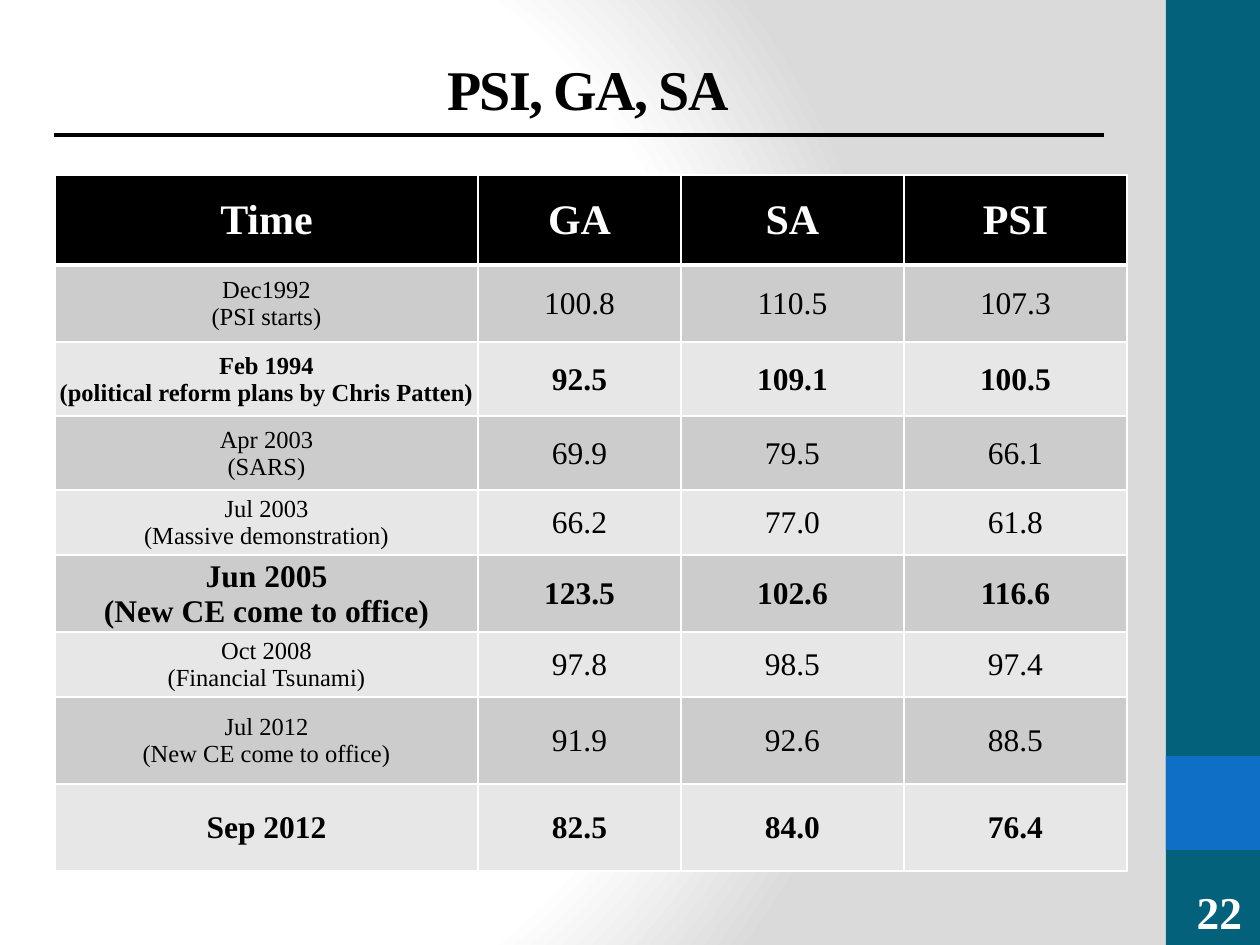
from lxml.etree import SubElement
from pptx import Presentation
from pptx.dml.color import RGBColor
from pptx.enum.shapes import MSO_CONNECTOR, MSO_SHAPE
from pptx.enum.text import MSO_ANCHOR, MSO_AUTO_SIZE, PP_ALIGN
from pptx.oxml import parse_xml
from pptx.oxml.ns import nsdecls, qn
from pptx.util import Pt

COLORS = {
    "black": "000000", "white": "FFFFFF", "shade": "DADADA",
    "teal": "04617B", "blue": "0F6FC6",
    "band_dark": "CCCCCC", "band_light": "E7E7E7",
}
FONT = "Times New Roman"


def px(*lengths):
    """Turn pixels (126 to the inch) into a list of EMU."""
    return [round(n * 914400 / 126) for n in lengths]


def style(p, size, color, bold):
    p.alignment = PP_ALIGN.CENTER
    p.font.name = FONT
    p.font.size = Pt(size)
    p.font.bold = bold
    p.font.color.rgb = RGBColor.from_string(COLORS[color])


prs = Presentation()
prs.slide_width, prs.slide_height = px(1260, 945)
s = prs.slides.add_slide(prs.slide_layouts[5])

# Background: radial gradient centred a fifth of the way across
s.background.fill.solid()
bg = s.element.find(".//" + qn("p:bgPr"))
stops = "".join(
    f'<a:gs pos="{pos}"><a:srgbClr val="{COLORS[name]}"/></a:gs>'
    for pos, name in ((0, "white"), (75000, "white"), (100000, "shade")))
bg.replace(bg[0], parse_xml(
    f'<a:gradFill {nsdecls("a")} rotWithShape="1"><a:gsLst>{stops}</a:gsLst>'
    '<a:path path="circle">'
    '<a:fillToRect l="20000" t="50000" r="100000" b="50000"/>'
    '</a:path></a:gradFill>'))

# Side band with its accent square
for top, height, color in ((0, 945, "teal"), (756, 94, "blue")):
    sp = s.shapes.add_shape(MSO_SHAPE.RECTANGLE, *px(1166, top, 94, height))
    sp.shadow.inherit = False
    sp.fill.solid()
    sp.fill.fore_color.rgb = RGBColor.from_string(COLORS[color])
    sp.line.fill.background()

# Slide number
tf = s.shapes.add_textbox(*px(1179, 878, 81, 67)).text_frame
tf.word_wrap = True
tf.vertical_anchor = MSO_ANCHOR.BOTTOM
p = tf.paragraphs[0]
p.text = "22"
style(p, 26, "white", True)

# Title and the rule below it
title = s.shapes.title
title.left, title.top, title.width, title.height = px(63, 38, 1050, 70)
tf = title.text_frame
tf.auto_size = MSO_AUTO_SIZE.NONE
tf.vertical_anchor = MSO_ANCHOR.TOP
tf.margin_top, tf.margin_bottom = px(16, 0)
p = tf.paragraphs[0]
p.text = "PSI, GA, SA"
style(p, 32, "black", True)
p.font._rPr.set("spc", "-100")

rule = s.shapes.add_connector(MSO_CONNECTOR.STRAIGHT, *px(54, 135, 1104, 135))
rule.line.width = Pt(2.25)
rule.line.color.rgb = RGBColor.from_string(COLORS["black"])
SubElement(rule._element.spPr, qn("a:effectLst"))

# Table: row height, bold, size of the time cell, then the four texts
rows = [
    (90, True, 24, "Time", "GA", "SA", "PSI"),
    (77, False, 14, "Dec1992\n(PSI starts)", "100.8", "110.5", "107.3"),
    (74, True, 14, "Feb 1994\n(political reform plans by Chris Patten)",
     "92.5", "109.1", "100.5"),
    (74, False, 14, "Apr 2003\n(SARS)", "69.9", "79.5", "66.1"),
    (65, False, 14, "Jul 2003\n(Massive demonstration)", "66.2", "77.0", "61.8"),
    (77, True, 18, "Jun 2005\n(New CE come to office)",
     "123.5", "102.6", "116.6"),
    (65, False, 14, "Oct 2008\n(Financial Tsunami)", "97.8", "98.5", "97.4"),
    (87, False, 14, "Jul 2012\n(New CE come to office)", "91.9", "92.6", "88.5"),
    (87, True, 18, "Sep 2012", "82.5", "84.0", "76.4"),
]
col_widths = (423, 203, 223, 223)
table = s.shapes.add_table(
    len(rows), len(col_widths),
    *px(55, 175, sum(col_widths), sum(row[0] for row in rows))).table
table.horz_banding = False
for col, width in zip(table.columns, px(*col_widths)):
    col.width = width

for i, (height, bold, time_size, *texts) in enumerate(rows):
    table.rows[i].height = px(height)[0]
    header = i == 0
    fill = "black" if header else "band_dark" if i % 2 else "band_light"
    for j, text in enumerate(texts):
        cell = table.cell(i, j)
        cell.vertical_anchor = MSO_ANCHOR.MIDDLE
        margins = (13, 13, 6, 6) if header else (1, 1, 1, 0)
        (cell.margin_left, cell.margin_right,
         cell.margin_top, cell.margin_bottom) = px(*margins)
        p = cell.text_frame.paragraphs[0]
        p.text = text
        style(p, time_size if header or j == 0 else 18,
              "white" if header else "black", bold)

        tcPr = cell._tc.get_or_add_tcPr()
        for side in ("lnL", "lnR", "lnT", "lnB"):
            thick = (header and side == "lnB") or (i == 1 and side == "lnT")
            ln = SubElement(tcPr, qn(f"a:{side}"), w=str(Pt(3 if thick else 1)))
            SubElement(SubElement(ln, qn("a:solidFill")), qn("a:srgbClr"),
                       val=COLORS["white"])
        cell.fill.solid()
        cell.fill.fore_color.rgb = RGBColor.from_string(COLORS[fill])

prs.save("out.pptx")
